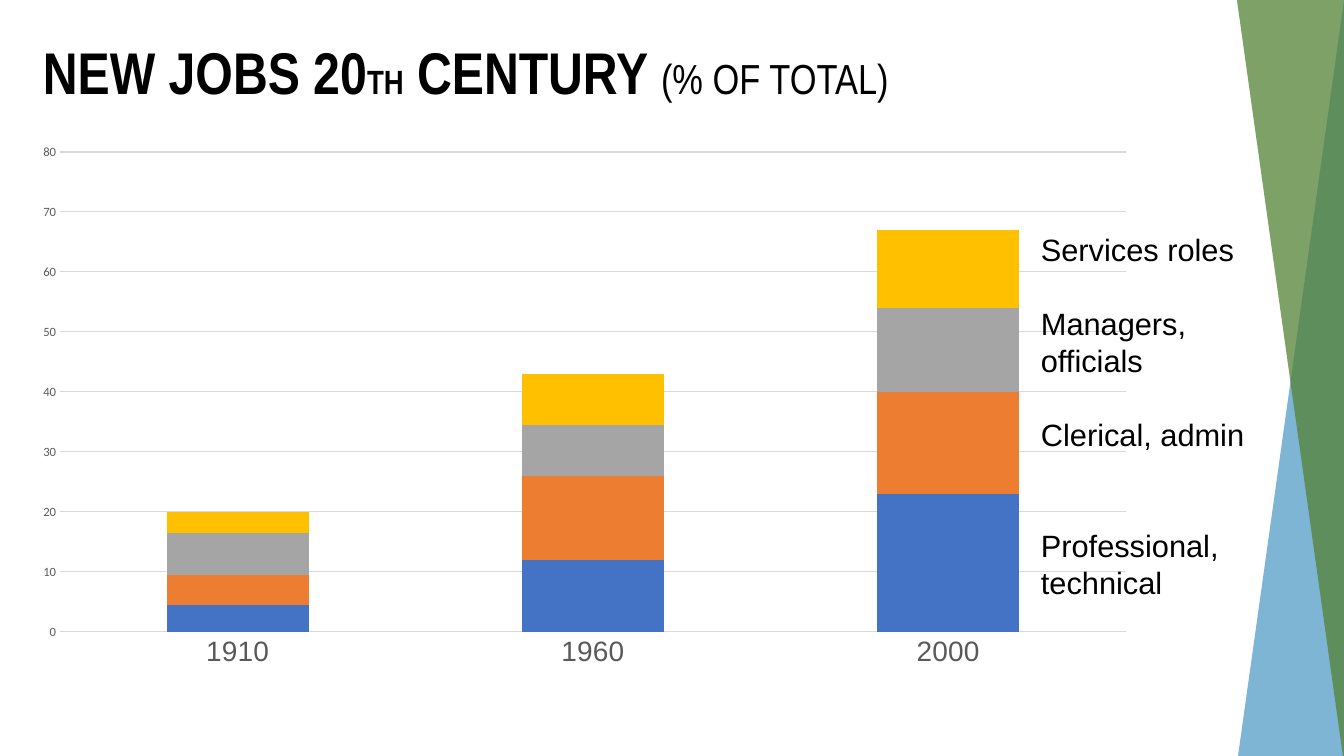
import lxml.etree
import pptx
import pptx.chart.data
import pptx.dml.color
import pptx.enum.chart
import pptx.enum.text
import pptx.oxml
import pptx.oxml.ns
import pptx.util

SCALE = 914400 / 100.8
WIDE, HIGH = 1344, 756
YEARS = ["1910", "1960", "2000"]
SERIES = [
    ("Series 1", "4472C4", (4.5, 12, 23)),
    ("Series 2", "ED7D31", (5, 14, 17)),
    ("Series 3", "A5A5A5", (7, 8.5, 14)),
    ("Series 4", "FFC000", (3.5, 8.5, 13)),
]
# Label and the number of empty lines above it
LABELS = [
    ("Services roles", 0),
    ("Managers, \vofficials", 1),
    ("Clerical, admin", 1),
    ("Professional,\vtechnical", 2),
]


def px(n):
    return pptx.util.Emu(round(n * SCALE))


def paint(color, code):
    color.rgb = pptx.dml.color.RGBColor.from_string(code)


def fill(part, code):
    part.fill.solid()
    paint(part.fill.fore_color, code)


def style(font, name, size, code, bold=False):
    font.name, font.size, font.bold = name, pptx.util.Pt(size), bold
    paint(font.color, code)


def rule(line, code):
    paint(line.color, code)
    line.width = pptx.util.Pt(0.75)


def add_text(slide, box, anchor):
    frame = slide.shapes.add_textbox(*map(px, box)).text_frame
    frame.word_wrap = True
    frame.vertical_anchor = anchor
    return frame


def add_wedge(slide, points, code, alpha):
    pen = slide.shapes.build_freeform(*points[0], scale=SCALE)
    pen.add_line_segments(points[1:], close=True)
    wedge = pen.convert_to_shape()
    wedge.shadow.inherit = False
    wedge.line.fill.background()
    fill(wedge, code)
    tone = wedge.fill._xPr.find(".//" + pptx.oxml.ns.qn("a:srgbClr"))
    lxml.etree.SubElement(tone, pptx.oxml.ns.qn("a:alpha"), val=str(alpha * 1000))


def add_decor(slide, box):
    left, top, width, height = box
    right, base = left + width, top + height
    add_wedge(slide, [(left + 1, base), (right, base), (right, top)], "006CAB", 50)
    add_wedge(slide, [(left, top), (right, top), (right, base), (right - 1, base)],
              "548235", 75)


def add_title(slide, box):
    para = add_text(slide, box, pptx.enum.text.MSO_ANCHOR.MIDDLE).paragraphs[0]
    para.line_spacing = 0.9
    for text, size, bold in [("NEW JOBS 20", 42, True), ("TH", 24, True),
                             (" CENTURY ", 42, True), ("(% OF TOTAL)", 30, False)]:
        run = para.add_run()
        run.text = text
        style(run.font, "Arial Narrow", size, "000000", bold)


def set_plot(chart, box, plot):
    """Fix the inner plot area at the plot box within the chart box."""
    left, top, width, height = box
    parts = {"x": (plot[0] - left) / width, "y": (plot[1] - top) / height,
             "w": plot[2] / width, "h": plot[3] / height}
    qn = pptx.oxml.ns.qn
    area = chart._chartSpace.find(".//" + qn("c:plotArea"))
    for old in area.findall(qn("c:layout")):
        area.remove(old)
    layout = lxml.etree.Element(qn("c:layout"))
    area.insert(0, layout)
    manual = lxml.etree.SubElement(layout, qn("c:manualLayout"))
    lxml.etree.SubElement(manual, qn("c:layoutTarget"), val="inner")
    for key in "xy":
        lxml.etree.SubElement(manual, qn(f"c:{key}Mode"), val="edge")
    for key, share in parts.items():
        lxml.etree.SubElement(manual, qn(f"c:{key}"), val=f"{share:.4f}")


def add_jobs(slide, box):
    data = pptx.chart.data.CategoryChartData()
    data.categories = YEARS
    for name, _, values in SERIES:
        data.add_series(name, values)
    kind = pptx.enum.chart.XL_CHART_TYPE.COLUMN_STACKED
    chart = slide.shapes.add_chart(kind, *map(px, box), data).chart
    chart.has_legend = chart.has_title = False
    style(chart.font, "Calibri", 10, "000000")
    left, top, width, height = box
    set_plot(chart, box, (left + 39, top + 18, width - 62, height - 64))

    plot = chart.plots[0]
    plot.gap_width, plot.overlap = 150, 100
    plot.vary_by_categories = False
    for bar, (_, code, _) in zip(plot.series, SERIES):
        fill(bar.format, code)

    years, scale = chart.category_axis, chart.value_axis
    for axis, name, size in [(years, "Arial", 20), (scale, "Calibri", 9)]:
        axis.major_tick_mark = pptx.enum.chart.XL_TICK_MARK.NONE
        axis.minor_tick_mark = pptx.enum.chart.XL_TICK_MARK.NONE
        style(axis.tick_labels.font, name, size, "595959")
    rule(years.format.line, "D9D9D9")
    scale.minimum_scale, scale.maximum_scale, scale.major_unit = 0, 80, 10
    scale.format.line.fill.background()
    rule(scale.major_gridlines.format.line, "D9D9D9")


def add_labels(slide, box):
    frame = add_text(slide, box, pptx.enum.text.MSO_ANCHOR.TOP)
    pitch = 26.4
    for i, (text, gap) in enumerate(LABELS):
        para = frame.add_paragraph() if i else frame.paragraphs[0]
        para.text = text
        para.line_spacing = pptx.util.Pt(pitch)
        if gap:
            para.space_before = pptx.util.Pt(gap * pitch)
        for run in para.runs:
            style(run.font, "Arial", 22, "000000")


def main():
    deck = pptx.Presentation()
    deck.slide_width, deck.slide_height = px(WIDE), px(HIGH)
    slide = deck.slides.add_slide(deck.slide_layouts[6])
    add_decor(slide, (1237, 0, 107, HIGH))
    add_title(slide, (33, 36, 1191, 79))
    add_jobs(slide, (21, 134, 1128, 544))
    add_labels(slide, (1031, 226, 340, 436))
    deck.save("out.pptx")


if __name__ == "__main__":
    main()
